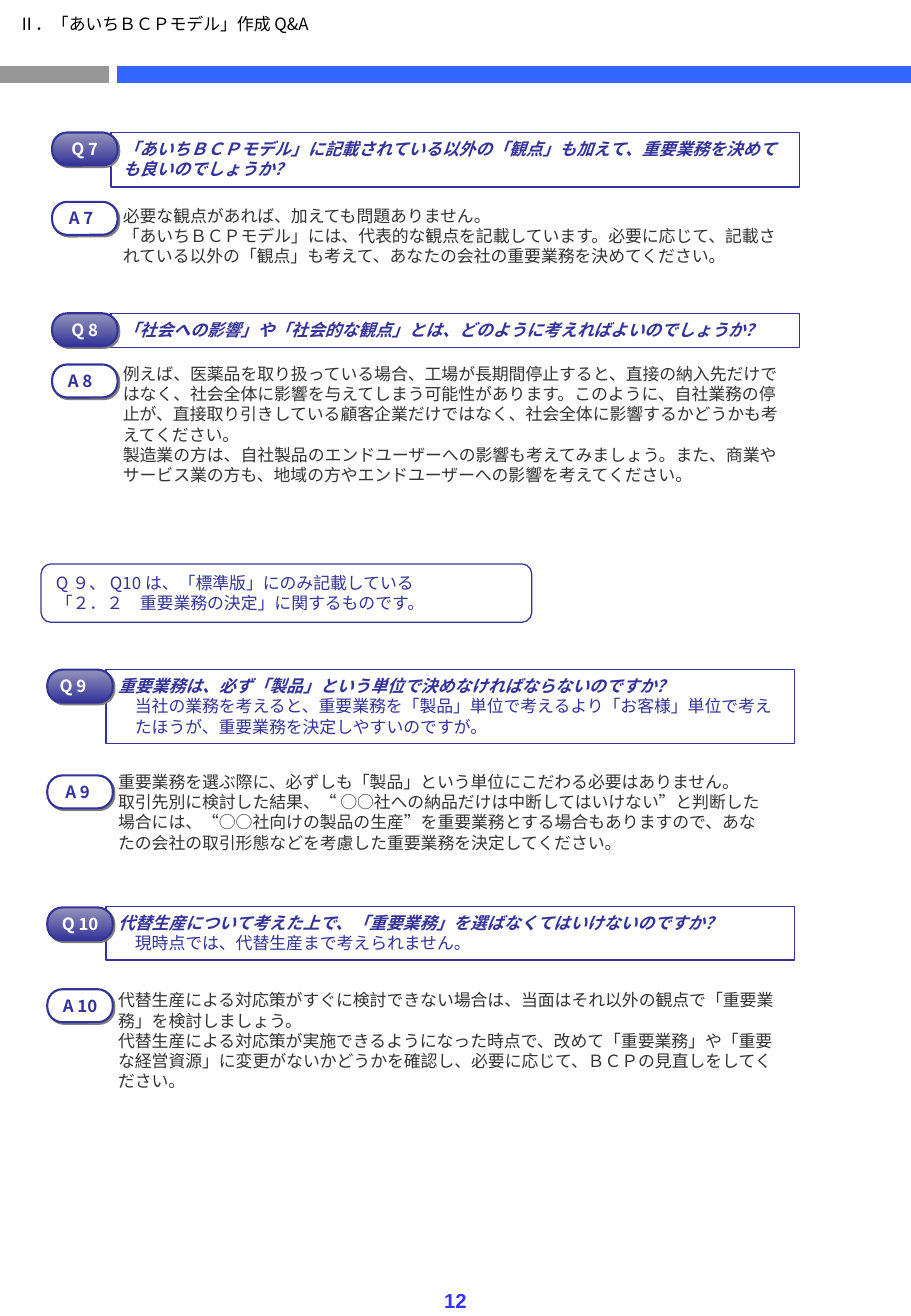
from lxml import etree
from pptx import Presentation
from pptx.dml.color import RGBColor
from pptx.enum import shapes, text
from pptx.oxml.ns import qn
from pptx.util import Cm, Pt

WHITE = RGBColor(0xFF, 0xFF, 0xFF)
BLACK = RGBColor(0x00, 0x00, 0x00)
NAVY = RGBColor(0x33, 0x33, 0x99)
LAVENDER = RGBColor(0x93, 0x93, 0xBB)
DARK_GRAY = RGBColor(0x33, 0x33, 0x33)
GRAY = RGBColor(0x96, 0x96, 0x96)
BLUE = RGBColor(0x33, 0x66, 0xFF)
PAGE_BLUE = RGBColor(0x33, 0x33, 0xFF)
LATIN, GOTHIC = "Arial", "Noto Sans CJK JP"
PILL_WIDTH, PILL_HEIGHT = 1.37, 0.69


def write(frame, paragraphs, color, size=10, bold=False, align=text.PP_ALIGN.LEFT,
          wrap=True, grow=True):
    """Fill a text frame with paragraphs, each a list of (font, wording) runs."""
    frame.word_wrap = wrap
    frame.auto_size = text.MSO_AUTO_SIZE.SHAPE_TO_FIT_TEXT if grow else text.MSO_AUTO_SIZE.NONE
    frame.vertical_anchor = text.MSO_ANCHOR.TOP
    for index, runs in enumerate(paragraphs):
        paragraph = frame.add_paragraph() if index else frame.paragraphs[0]
        paragraph.alignment = align
        for font_name, wording in runs:
            run = paragraph.add_run()
            run.text = wording
            run.font.size = Pt(size)
            run.font.bold = bold
            run.font.color.rgb = color
            run.font.name = font_name
            etree.SubElement(run._r.get_or_add_rPr(), qn("a:ea"), typeface=GOTHIC)


def add_box(kind, left, top, width, height, line_width):
    """Add a white shape with a navy outline."""
    shape = slide.shapes.add_shape(kind, Cm(left), Cm(top), Cm(width), Cm(height))
    shape.shadow.inherit = False
    shape.fill.solid()
    shape.fill.fore_color.rgb = WHITE
    shape.line.color.rgb = NAVY
    shape.line.width = Pt(line_width)
    return shape


presentation = Presentation()
presentation.slide_width, presentation.slide_height = Cm(19.05), Cm(27.51)
slide = presentation.slides.add_slide(presentation.slide_layouts[5])

# Heading
title = slide.shapes.title
title.left, title.top, title.width, title.height = Cm(0.13), Cm(0.15), Cm(15.19), Cm(0.69)
write(title.text_frame, [[(GOTHIC, "Ⅱ．「あいちＢＣＰモデル」作成Q&A")]], BLACK, grow=False)

# Two-colour rule under the heading
for start, end, color in [(0, 2.28, GRAY), (2.44, 19.05, BLUE)]:
    rule = slide.shapes.add_connector(
        shapes.MSO_CONNECTOR.STRAIGHT, Cm(start), Cm(1.55), Cm(end), Cm(1.55))
    rule.line.color.rgb = color
    rule.line.width = Pt(10)
    etree.SubElement(rule._element.spPr, qn("a:effectLst"))

# Questions and answers:
# label, label shift, pill left, pill top, body top, body width, body height, paragraphs
entries = [
    ("Q 7", 0, 1.09, 2.77, 2.77, 14.4, 1.14, [
        [(LATIN, "「あいちＢＣＰモデル」に記載されている以外の「観点」も加えて、"
                 "重要業務を決めても良いのでしょうか？")]]),
    ("A 7", -0.08, 1.09, 4.22, 4.17, 14.4, 1.52, [
        [(LATIN, "必要な観点があれば、加えても問題ありません。")],
        [(LATIN, "「あいちＢＣＰモデル」には、代表的な観点を記載しています。必要に応じて、"
                 "記載されている以外の「観点」も考えて、あなたの会社の重要業務を決めてください。")]]),
    ("Q 8", 0, 1.09, 6.55, 6.55, 14.4, 0.71, [
        [(LATIN, "「社会への影響」や「社会的な観点」とは、どのように考えればよいのでしょうか？")]]),
    ("A 8", -0.1, 1.09, 7.62, 7.47, 14.4, 2.79, [
        [(LATIN, "例えば、医薬品を取り扱っている場合、工場が長期間停止すると、直接の納入先だけではなく、"
                 "社会全体に影響を与えてしまう可能性があります。このように、自社業務の停止が、"
                 "直接取り引きしている顧客企業だけではなく、社会全体に影響するかどうかも考えてください。")],
        [(LATIN, "製造業の方は、自社製品のエンドユーザーへの影響も考えてみましょう。"
                 "また、商業やサービス業の方も、地域の方や"),
         (GOTHIC, "エンドユーザーへ"), (LATIN, "の影響を考えてください。")]]),
    ("Q 9", -0.15, 0.99, 14.0, 14.0, 14.4, 1.55, [
        [(LATIN, "重要業務は、必ず「製品」という単位で決めなければならないのですか？")],
        [(LATIN, "　当社の業務を考えると、重要業務を「製品」単位で考えるより「お客様」単位で考え")],
        [(LATIN, "　たほうが、重要業務を決定しやすいのですが。")]]),
    ("A 9", -0.05, 0.99, 16.21, 16.0, 14.1, 1.96, [
        [(LATIN, "重要業務を選ぶ際に、必ずしも「製品」という単位にこだわる必要はありません。")],
        [(LATIN, "取引先別に検討した結果、"), (GOTHIC, "“ "),
         (LATIN, "○○社への納品だけは中断してはいけない"), (GOTHIC, "”"),
         (LATIN, "と判断した場合には、“○○社向けの製品の生産”を重要業務とする場合もありますので、"
                 "あなたの会社の取引形態などを考慮した重要業務を決定してください。")]]),
    ("Q 10", 0, 0.99, 18.97, 18.95, 14.4, 1.12, [
        [(LATIN, "代替生産について考えた上で、「重要業務」を選ばなくてはいけないのですか？")],
        [(GOTHIC, "　現時点では、代替生産まで考えられません。")]]),
    ("A 10", 0, 0.99, 20.68, 20.57, 14.4, 2.36, [
        [(LATIN, "代替生産による対応策がすぐに検討できない場合は、"
                 "当面はそれ以外の観点で「重要業務」を検討しましょう。")],
        [(LATIN, "代替生産による対応策が実施できるようになった時点で、改めて「重要業務」や"
                 "「重要な経営資源」に変更がないかどうかを確認し、必要に応じて、"),
         (GOTHIC, "ＢＣＰの見直しをしてください"), (LATIN, "。")]]),
]

for label, shift, left, pill_top, top, width, height, paragraphs in entries:
    is_question = label.startswith("Q")
    body_left = left + 1.23

    # Framed question or plain answer
    if is_question:
        body = add_box(shapes.MSO_SHAPE.RECTANGLE, body_left, top, width, height, 0.75)
    else:
        body = slide.shapes.add_textbox(Cm(body_left), Cm(top), Cm(width), Cm(height))
    write(body.text_frame, paragraphs, NAVY if is_question else DARK_GRAY)
    if is_question:
        for run in body.text_frame.paragraphs[0].runs:
            run.font.bold = run.font.italic = True

    # Pill with a hard offset shadow
    pill = add_box(shapes.MSO_SHAPE.ROUNDED_RECTANGLE, left, pill_top,
                   PILL_WIDTH, PILL_HEIGHT, 1.25)
    pill.adjustments[0] = 0.46
    if is_question:
        pill.fill.gradient()
        pill.fill.gradient_angle = 270
        for stop, color in zip(pill.fill.gradient_stops, (LAVENDER, NAVY)):
            stop.color.rgb = color
    effects = pill._element.spPr.find(qn("a:effectLst"))
    shadow = etree.SubElement(effects, qn("a:outerShdw"), blurRad="0",
                              dist=str(Pt(1.4)), dir="2700000", algn="ctr", rotWithShape="0")
    etree.SubElement(shadow, qn("a:srgbClr"), val="808080")

    # Pill label
    caption = slide.shapes.add_textbox(
        Cm(left + shift), Cm(pill_top), Cm(PILL_WIDTH), Cm(PILL_HEIGHT))
    write(caption.text_frame, [[(GOTHIC, label)]], WHITE if is_question else NAVY,
          bold=True, align=text.PP_ALIGN.CENTER, wrap=False, grow=False)

# Note on the standard edition
note = add_box(shapes.MSO_SHAPE.ROUNDED_RECTANGLE, 0.86, 11.79, 10.26, 1.22, 0.75)
write(note.text_frame, [
    [(GOTHIC, "Q９、Q10"), (LATIN, "は、「標準版」にのみ記載している")],
    [(LATIN, "「２．２　重要業務の決定」に関するものです。")]], NAVY)

# Page number
page_number = slide.shapes.add_textbox(Cm(9.04), Cm(26.8), Cm(0.97), Cm(0.76))
write(page_number.text_frame, [[(LATIN, "12")]], PAGE_BLUE, size=12, bold=True,
      align=text.PP_ALIGN.CENTER, wrap=False)

presentation.save("out.pptx")
